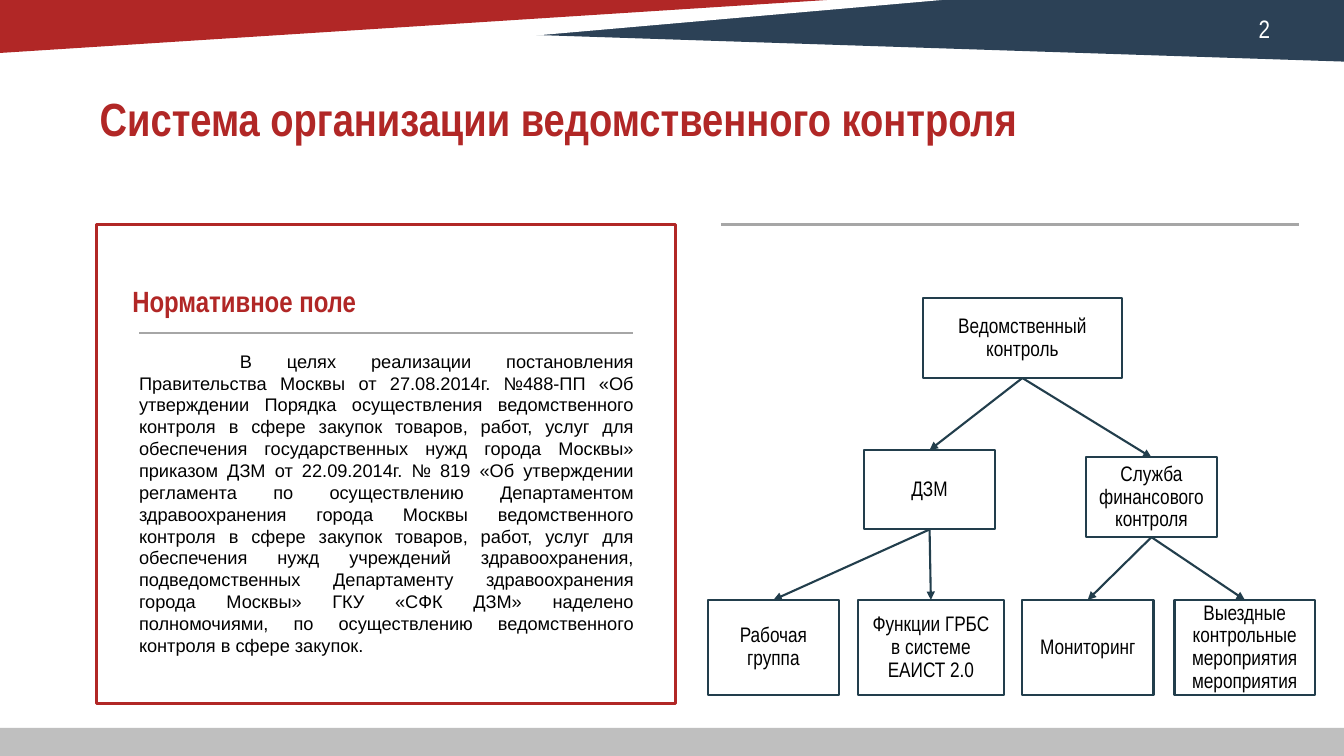
from lxml import etree
from pptx import Presentation
from pptx.dml.color import RGBColor
from pptx.enum import shapes, text
from pptx.oxml import ns
from pptx.util import Pt

RED = RGBColor(0xB1, 0x27, 0x26)
NAVY = RGBColor(0x2C, 0x41, 0x56)
TEAL = RGBColor(0x22, 0x3E, 0x4C)
GREY = RGBColor(0xA6, 0xA6, 0xA6)
SILVER = RGBColor(0xBF, 0xBF, 0xBF)
WHITE = RGBColor(0xFF, 0xFF, 0xFF)
BLACK = RGBColor(0, 0, 0)
NARROW = "Arial Narrow"


def write(shape, words, size, color, font=NARROW, bold=False,
          align=text.PP_ALIGN.LEFT, spacing=1.0, side=0):
    frame = shape.text_frame
    frame.word_wrap = True
    frame.margin_left = frame.margin_right = Pt(side)
    frame.margin_top = frame.margin_bottom = 0
    para = frame.paragraphs[0]
    para.alignment = align
    para.line_spacing = spacing
    span = para.add_run()
    span.text = words
    span.font.size = Pt(size)
    span.font.name = font
    span.font.bold = bold
    span.font.color.rgb = color
    return para


def connect(x1, y1, x2, y2, color, width):
    line = page.shapes.add_connector(
        shapes.MSO_CONNECTOR.STRAIGHT, Pt(x1), Pt(y1), Pt(x2), Pt(y2))
    line.line.color.rgb = color
    line.line.width = Pt(width)
    etree.SubElement(line._element.spPr, ns.qn("a:effectLst"))
    return line


deck = Presentation()
deck.slide_width, deck.slide_height = Pt(960), Pt(540)
page = deck.slides.add_slide(deck.slide_layouts[6])

bands = [
    (NAVY, [(140, -3.5), (960, -3.5), (960, 44), (291.5, 22.3)]),
    (WHITE, [(-2.5, -3), (707, -3), (-2.5, 59.2)]),
    (RED, [(-2.5, -3), (638.5, -3), (-2.5, 38.4)]),
]
for color, corners in bands:
    builder = page.shapes.build_freeform(*corners[0], scale=Pt(1))
    builder.add_line_segments(corners[1:], close=True)
    band = builder.convert_to_shape()
    band.shadow.inherit = False
    band.fill.solid()
    band.fill.fore_color.rgb = color
    band.line.fill.background()

footer = page.shapes.add_shape(
    shapes.MSO_SHAPE.RECTANGLE, 0, Pt(520), Pt(960), Pt(20))
footer.shadow.inherit = False
footer.fill.solid()
footer.fill.fore_color.rgb = SILVER
footer.line.fill.background()

frame_box = page.shapes.add_shape(
    shapes.MSO_SHAPE.RECTANGLE, Pt(69), Pt(160.5), Pt(413.5), Pt(342))
frame_box.shadow.inherit = False
frame_box.fill.background()
frame_box.line.color.rgb = RED
frame_box.line.width = Pt(2.25)

number = page.shapes.add_textbox(Pt(899), Pt(9.5), Pt(50), Pt(21.5))
write(number, "2", 18, WHITE)

title = page.shapes.add_textbox(Pt(71.2), Pt(68.2), Pt(827), Pt(61))
write(title, "Система организации ведомственного контроля", 33.2, RED,
      bold=True, spacing=0.93)

heading = page.shapes.add_textbox(Pt(94.5), Pt(202.5), Pt(357), Pt(25))
write(heading, "Нормативное поле", 20.9, RED, bold=True)

body = page.shapes.add_textbox(Pt(99.3), Pt(250), Pt(353), Pt(220))
order = write(
    body, "\tВ целях реализации постановления Правительства Москвы от "
    "27.08.2014г. №488-ПП «Об утверждении Порядка осуществления "
    "ведомственного контроля в сфере закупок товаров, работ, услуг для "
    "обеспечения государственных нужд города Москвы» приказом ДЗМ от "
    "22.09.2014г. № 819 «Об утверждении регламента по осуществлению "
    "Департаментом здравоохранения города Москвы ведомственного контроля "
    "в сфере закупок товаров, работ, услуг для обеспечения нужд учреждений "
    "здравоохранения, подведомственных Департаменту здравоохранения города "
    "Москвы» ГКУ «СФК ДЗМ» наделено полномочиями, по осуществлению "
    "ведомственного контроля в сфере закупок.",
    13, BLACK, font="Arial", align=text.PP_ALIGN.JUSTIFY)
tabs = etree.SubElement(order._p.get_or_add_pPr(), ns.qn("a:tabLst"))
etree.SubElement(tabs, ns.qn("a:tab"), pos=str(Pt(72)), algn="l")

connect(99.3, 237.7, 452.3, 237.7, GREY, 1.75)
connect(515, 160.5, 928, 160.5, GREY, 1.75)

nodes = {
    "control": ("Ведомственный контроль", 659.3, 213, 142, 57),
    "department": ("ДЗМ", 617, 321.5, 94, 56.7),
    "service": ("Служба финансового контроля", 775.5, 326.7, 94, 57),
    "group": ("Рабочая группа", 505.5, 428.5, 94, 68),
    "functions": ("Функции ГРБС в системе ЕАИСТ 2.0", 612.7, 428.5, 104.5, 68),
    "monitoring": ("Мониторинг", 730, 428.5, 94, 68),
    "visits": ("Выездные контрольные мероприятия мероприятия",
               839, 428.5, 100.3, 68),
}
boxes = {}
for name, (words, *place) in nodes.items():
    box = page.shapes.add_shape(
        shapes.MSO_SHAPE.RECTANGLE, *[Pt(length) for length in place])
    box.shadow.inherit = False
    box.fill.background()
    box.line.color.rgb = TEAL
    box.line.width = Pt(1.5)
    box.text_frame.vertical_anchor = text.MSO_ANCHOR.MIDDLE
    write(box, words, 15, BLACK, align=text.PP_ALIGN.CENTER,
          spacing=0.9, side=5.7)
    boxes[name] = box

branches = [
    ("control", "department"), ("control", "service"),
    ("department", "group"), ("department", "functions"),
    ("service", "monitoring"), ("service", "visits"),
]
for parent, child in branches:
    arrow = connect(0, 0, 0, 0, TEAL, 1.5)
    arrow.begin_connect(boxes[parent], 2)
    arrow.end_connect(boxes[child], 0)
    etree.SubElement(arrow.line._get_or_add_ln(), ns.qn("a:tailEnd"),
                     type="triangle")

deck.save("out.pptx")
